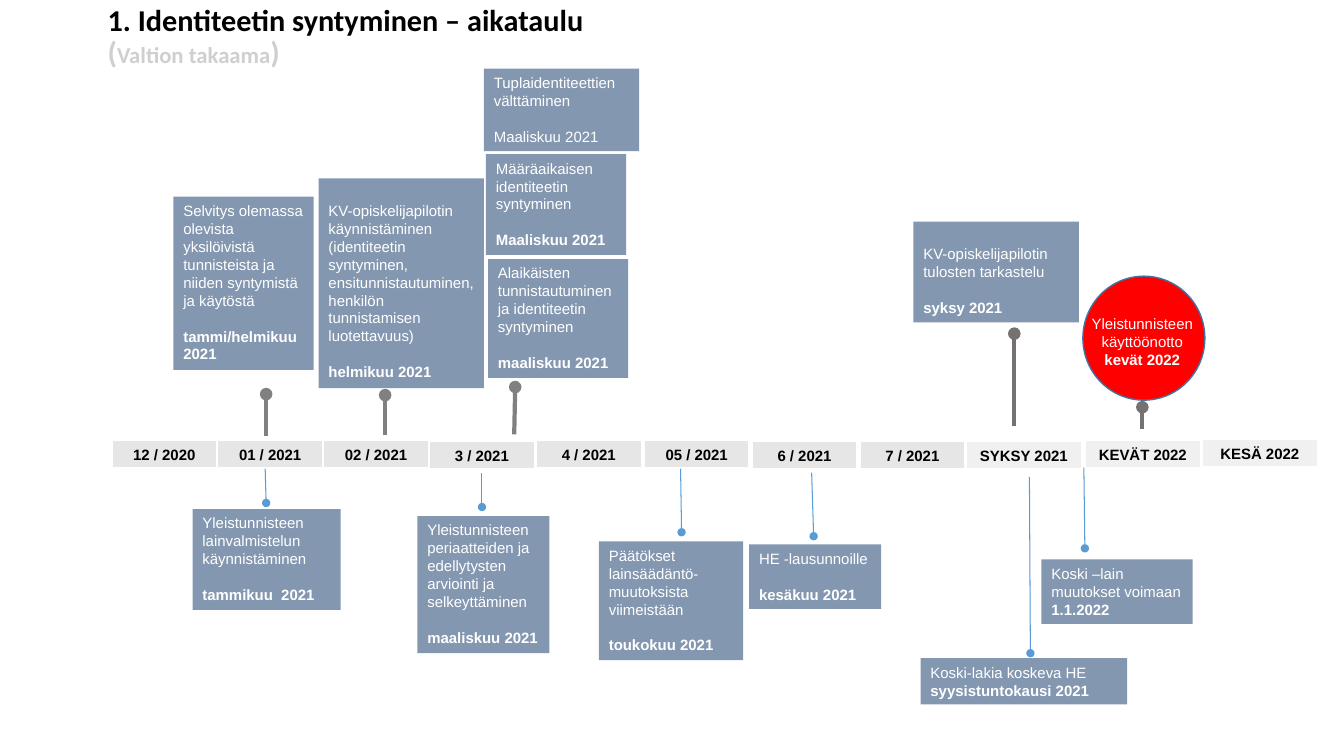
import pptx
import pptx.dml.color
import pptx.enum.shapes
import pptx.enum.text
import pptx.oxml
import pptx.oxml.ns
import pptx.util
from pptx.dml.color import RGBColor
from pptx.util import Inches

BLACK = RGBColor(0x00, 0x00, 0x00)
WHITE = RGBColor(0xFF, 0xFF, 0xFF)
RED = RGBColor(0xFF, 0x00, 0x00)
CIRCLE_EDGE = RGBColor(0x43, 0x73, 0x9E)
SUBTITLE_GREY = RGBColor(0xD0, 0xCE, 0xCE)
EVENT_BLUE = RGBColor(0x84, 0x97, 0xB0)
MONTH_GREY = RGBColor(0xE7, 0xE6, 0xE6)
SEASON_GREY = RGBColor(0xF1, 0xF0, 0xF0)
PIN_GREY = RGBColor(0x80, 0x80, 0x80)
PIN_DARK = RGBColor(0x76, 0x71, 0x71)
PIN_BLUE = RGBColor(0x5B, 0x9B, 0xD5)

TEXT_SIZE = 10.7
LINE_GAP = 12.8  # one text line, in points
LEFT = pptx.enum.text.PP_ALIGN.LEFT
CENTER = pptx.enum.text.PP_ALIGN.CENTER
RECTANGLE = pptx.enum.shapes.MSO_SHAPE.RECTANGLE
OVAL = pptx.enum.shapes.MSO_SHAPE.OVAL

# left, top, width, height, text, date, gap before date, bold date, free line on top
EVENTS = [
    (9.13, 6.53, 2.05, 0.46, "Koski-lakia koskeva HE", "syysistuntokausi 2021", False, True, False),
    (10.33, 5.55, 1.5, 0.64, "Koski –lain muutokset voimaan", "1.1.2022", False, True, False),
    (5.94, 5.37, 1.43, 1.18, "Päätökset lainsäädäntö-muutoksista viimeistään",
     "toukokuu 2021", True, True, False),
    (4.14, 5.12, 1.31, 1.36, "Yleistunnisteen periaatteiden ja edellytysten arviointi ja selkeyttäminen",
     "maaliskuu 2021", True, True, False),
    (1.91, 5.05, 1.47, 1, "Yleistunnisteen lainvalmistelun käynnistäminen",
     "tammikuu  2021", True, True, False),
    (3.16, 1.77, 1.64, 2.08,
     "KV-opiskelijapilotin käynnistäminen (identiteetin syntyminen, "
     "ensitunnistautuminen, henkilön tunnistamisen luotettavuus)",
     "helmikuu 2021", True, True, True),
    (1.72, 1.95, 1.39, 1.72,
     "Selvitys olemassa olevista yksilöivistä tunnisteista ja niiden syntymistä ja käytöstä",
     "tammi/helmikuu 2021", True, True, False),
    (7.43, 5.4, 1.31, 0.64, "HE -lausunnoille", "kesäkuu 2021", True, True, False),
    (9.06, 2.2, 1.64, 1, "KV-opiskelijapilotin tulosten tarkastelu", "syksy 2021", True, True, True),
    (4.84, 2.57, 1.39, 1.18, "Alaikäisten tunnistautuminen ja identiteetin syntyminen",
     "maaliskuu 2021", True, True, False),
    (4.82, 1.53, 1.39, 1, "Määräaikaisen identiteetin syntyminen", "Maaliskuu 2021", True, True, False),
    (4.8, 0.68, 1.54, 0.82, "Tuplaidentiteettien välttäminen", "Maaliskuu 2021", True, False, False),
]

# label, left, top
MONTHS = [
    ("12 / 2020", 1.11, 4.37), ("01 / 2021", 2.16, 4.37), ("02 / 2021", 3.21, 4.37),
    ("3 / 2021", 4.26, 4.38), ("4 / 2021", 5.32, 4.37), ("05 / 2021", 6.39, 4.37),
    ("6 / 2021", 7.46, 4.38), ("7 / 2021", 8.53, 4.38),
]
SEASONS = [("SYKSY 2021", 9.58, 4.38), ("KEVÄT 2022", 10.76, 4.37), ("KESÄ 2022", 11.92, 4.36)]

# Pins: dot x, dot y, end x, end y
GREY_PINS = [(2.64, 3.91, 2.64, 4.33), (3.82, 3.92, 3.82, 4.32), (5.11, 3.84, 5.1, 4.31)]
DARK_PINS = [(10.06, 3.31, 10.06, 4.23), (11.33, 4.04, 11.33, 4.26)]
BLUE_PINS = [
    (2.64, 4.99, 2.63, 4.65), (4.78, 5.03, 4.78, 4.69), (6.76, 5.28, 6.75, 4.65),
    (8.07, 5.32, 8.05, 4.69), (10.22, 6.48, 10.21, 4.73), (10.76, 5.44, 10.75, 4.64),
]


def add_run(paragraph, text, color, bold=False, size=TEXT_SIZE, font="Arial"):
    run = paragraph.add_run()
    run.text = text
    run.font.name = font
    run.font.size = pptx.util.Pt(size)
    run.font.bold = bold
    run.font.color.rgb = color


def add_block(slide, kind, left, top, width, height, fill, edge=None):
    block = slide.shapes.add_shape(kind, Inches(left), Inches(top), Inches(width), Inches(height))
    block.shadow.inherit = False
    block.fill.solid()
    block.fill.fore_color.rgb = fill
    if edge is None:
        block.line.fill.background()
    else:
        block.line.color.rgb = edge
        block.line.width = pptx.util.Pt(1)
    return block


def add_text_box(slide, left, top, width, height):
    frame = slide.shapes.add_textbox(Inches(left), Inches(top), Inches(width), Inches(height)).text_frame
    frame.word_wrap = True
    return frame


def write_event(frame, text, date, align=LEFT, gap=False, bold=True):
    body = frame.paragraphs[0]
    add_run(body, text, WHITE)
    when = frame.add_paragraph()
    add_run(when, date, WHITE, bold)
    body.alignment = when.alignment = align
    if gap:
        when.space_before = pptx.util.Pt(LINE_GAP)


def add_event(slide, left, top, width, height, text, date, gap, bold, free_top):
    frame = add_block(slide, RECTANGLE, left, top, width, height, EVENT_BLUE).text_frame
    frame.word_wrap = True
    frame.vertical_anchor = pptx.enum.text.MSO_ANCHOR.TOP
    if free_top:
        frame.margin_top = Inches(0.05) + pptx.util.Pt(LINE_GAP)
    write_event(frame, text, date, gap=gap, bold=bold)


def add_period(slide, label, left, top, width, fill):
    frame = add_block(slide, RECTANGLE, left, top, width, 0.27, fill, WHITE).text_frame
    frame.vertical_anchor = pptx.enum.text.MSO_ANCHOR.MIDDLE
    frame.paragraphs[0].alignment = CENTER
    add_run(frame.paragraphs[0], label, BLACK, bold=True)


def add_pin(slide, dot_x, dot_y, end_x, end_y, color, width):
    pin = slide.shapes.add_connector(pptx.enum.shapes.MSO_CONNECTOR.STRAIGHT, Inches(dot_x),
                                     Inches(dot_y), Inches(end_x), Inches(end_y))
    pin.line.color.rgb = color
    pin.line.width = pptx.util.Pt(width)
    dot = pptx.oxml.parse_xml(f'<a:headEnd {pptx.oxml.ns.nsdecls("a")} type="oval"/>')
    pin.line._get_or_add_ln().append(dot)
    no_shadow = pptx.oxml.parse_xml(f'<a:effectLst {pptx.oxml.ns.nsdecls("a")}/>')
    pin._element.spPr.append(no_shadow)


def add_title(slide):
    frame = add_text_box(slide, 0.97, 0.05, 5.24, 0.68)
    frame.margin_top = frame.margin_bottom = 0
    heading = frame.paragraphs[0]
    subtitle = frame.add_paragraph()
    heading.line_spacing = subtitle.line_spacing = 0.9
    add_run(heading, "1. Identiteetin syntyminen – aikataulu", BLACK, True, 21.6, "Calibri")
    for text, size in (("(", 21.6), ("Valtion takaama", 16.2), (")", 21.6)):
        add_run(subtitle, text, SUBTITLE_GREY, True, size, "Calibri")


def main():
    deck = pptx.Presentation()
    deck.slide_width = Inches(13.33)
    deck.slide_height = Inches(7.5)
    slide = deck.slides.add_slide(deck.slide_layouts[6])

    add_title(slide)

    # Launch circle
    add_block(slide, OVAL, 10.74, 2.74, 1.21, 1.23, RED, CIRCLE_EDGE)
    launch = add_text_box(slide, 10.55, 3.07, 1.56, 0.64)
    write_event(launch, "Yleistunnisteen käyttöönotto", "kevät 2022", CENTER)

    # Timeline
    for label, left, top in MONTHS:
        add_period(slide, label, left, top, 1.04, MONTH_GREY)
    for label, left, top in SEASONS:
        add_period(slide, label, left, top, 1.15, SEASON_GREY)

    # Pins and events
    for pins, color, width in ((GREY_PINS, PIN_GREY, 3), (DARK_PINS, PIN_DARK, 3),
                               (BLUE_PINS, PIN_BLUE, 0.75)):
        for pin in pins:
            add_pin(slide, *pin, color, width)
    for event in EVENTS:
        add_event(slide, *event)

    deck.save("out.pptx")


if __name__ == "__main__":
    main()
